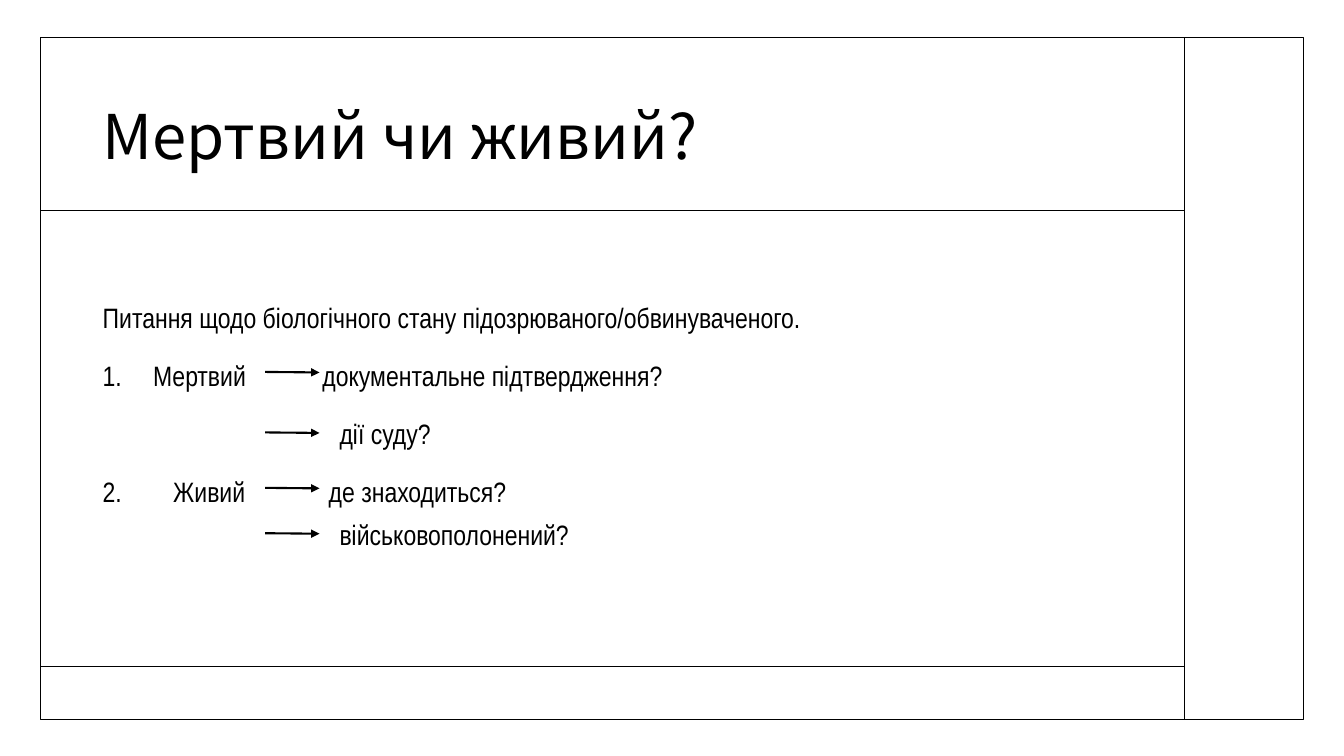
from lxml import etree
from pptx import Presentation
from pptx import util as u
from pptx.dml.color import RGBColor
from pptx.enum import shapes, text
from pptx.oxml.ns import qn

COLOURS = {"ink": "000000", "paper": "FFFFFF"}
FONTS = {"title": "Noto Sans CJK KR", "body": "Arial Narrow"}
COLUMNS, ROWS = 160, 90
LEFT, TOP, RIGHT, BOTTOM = 4.8, 4.44, 155.16, 85.68
DIVIDER = 141
TEXT_LEFT, TEXT_WIDTH = 11.04, 122.16
ANSWER_INDENT = 28.2
ARROW_START, ARROW_END, ARROW_DROP = 31.56, 38.04, 0.06
ARROW_ROWS = (44.28, 51.48, 58.08, 63.48)


class SlideBuilder:
    """Draws styled elements on one slide, measured in grid columns and rows."""

    def __init__(self, presentation):
        self.column = presentation.slide_width / COLUMNS
        self.row = presentation.slide_height / ROWS
        self.slide = presentation.slides.add_slide(presentation.slide_layouts[5])
        background = self.slide.background.fill
        background.solid()
        background.fore_color.rgb = self.colour("paper")

    def colour(self, name):
        return RGBColor.from_string(COLOURS[name])

    def x(self, columns):
        return u.Emu(round(columns * self.column))

    def y(self, rows):
        return u.Emu(round(rows * self.row))

    def box(self, left, top, width, height):
        return self.x(left), self.y(top), self.x(width), self.y(height)

    def run(self, paragraph, words, font, size):
        run = paragraph.add_run()
        run.text = words
        run.font.name = FONTS[font]
        run.font.size = u.Pt(size)
        run.font.color.rgb = self.colour("ink")
        return run

    def stroke(self, line, width):
        line.color.rgb = self.colour("ink")
        line.width = u.Pt(width)

    def frame(self, *place):
        shape = self.slide.shapes.add_shape(
            shapes.MSO_SHAPE.RECTANGLE, *self.box(*place))
        shape.shadow.inherit = False
        shape.fill.background()
        self.stroke(shape.line, 1)

    def line(self, x1, y1, x2, y2, width=1, arrow=False):
        connector = self.slide.shapes.add_connector(
            shapes.MSO_CONNECTOR.STRAIGHT,
            self.x(x1), self.y(y1), self.x(x2), self.y(y2))
        self.stroke(connector.line, width)
        if arrow:
            outline = connector.line._get_or_add_ln()
            etree.SubElement(outline, qn("a:tailEnd"), type="triangle")
        etree.SubElement(connector._element.spPr, qn("a:effectLst"))

    def title(self, words, *place):
        shape = self.slide.shapes.title
        shape.left, shape.top, shape.width, shape.height = self.box(*place)
        shape.text_frame.word_wrap = True
        shape.text_frame.vertical_anchor = text.MSO_ANCHOR.MIDDLE
        paragraph = shape.text_frame.paragraphs[0]
        paragraph.alignment = text.PP_ALIGN.LEFT
        paragraph.line_spacing = 0.9
        self.run(paragraph, words, "title", 44)

    def text_box(self, bottom_inset, *place):
        shape = self.slide.shapes.add_textbox(*self.box(*place))
        text_frame = shape.text_frame
        text_frame.word_wrap = True
        text_frame.vertical_anchor = text.MSO_ANCHOR.BOTTOM
        text_frame.margin_bottom = self.y(bottom_inset)
        return text_frame

    def paragraph(self, text_frame, words, indent=0, number=None, before=10,
                  answer=None, gap=0):
        first = text_frame.paragraphs[0]
        paragraph = text_frame.add_paragraph() if first.runs else first
        paragraph.alignment = text.PP_ALIGN.LEFT
        paragraph.line_spacing = 1.3
        paragraph.space_before = u.Pt(before)
        properties = paragraph._p.get_or_add_pPr()
        properties.set("marL", str(self.x(indent)))
        if number:
            properties.set("indent", str(-self.x(indent)))
            etree.SubElement(properties, qn("a:buFont"), typeface=FONTS["body"])
            etree.SubElement(properties, qn("a:buAutoNum"),
                             type="arabicPeriod", startAt=str(number))
        self.run(paragraph, words, "body", 20)
        if answer:
            space = self.run(paragraph, " ", "body", 20)
            space._r.get_or_add_rPr().set("spc", str(gap * 100))
            self.run(paragraph, answer, "body", 20)


def main():
    presentation = Presentation()
    presentation.slide_width = u.Inches(13.33)
    presentation.slide_height = u.Inches(7.5)
    builder = SlideBuilder(presentation)

    builder.frame(LEFT, TOP, RIGHT - LEFT, BOTTOM - TOP)
    builder.title("Мертвий чи живий?", TEXT_LEFT, 10.68, TEXT_WIDTH, 11.76)
    for row in (25.08, 79.32):
        builder.line(LEFT, row, DIVIDER, row)
    builder.line(DIVIDER, TOP, DIVIDER, BOTTOM)

    body = builder.text_box(7.44, TEXT_LEFT, 31.44, TEXT_WIDTH, 41.64)
    builder.paragraph(
        body, "Питання щодо біологічного стану підозрюваного/обвинуваченого.")
    builder.paragraph(body, "Мертвий", indent=6, number=1,
                      answer="документальне підтвердження?", gap=50)
    builder.paragraph(body, "дії суду?", indent=ANSWER_INDENT)
    builder.paragraph(body, "Живий", indent=8.4, number=2,
                      answer="де знаходиться?", gap=55)
    builder.paragraph(body, "військовополонений?", indent=ANSWER_INDENT, before=0)

    for row in ARROW_ROWS:
        builder.line(ARROW_START, row, ARROW_END, row + ARROW_DROP,
                     width=1.5, arrow=True)
    presentation.save("out.pptx")


if __name__ == "__main__":
    main()
